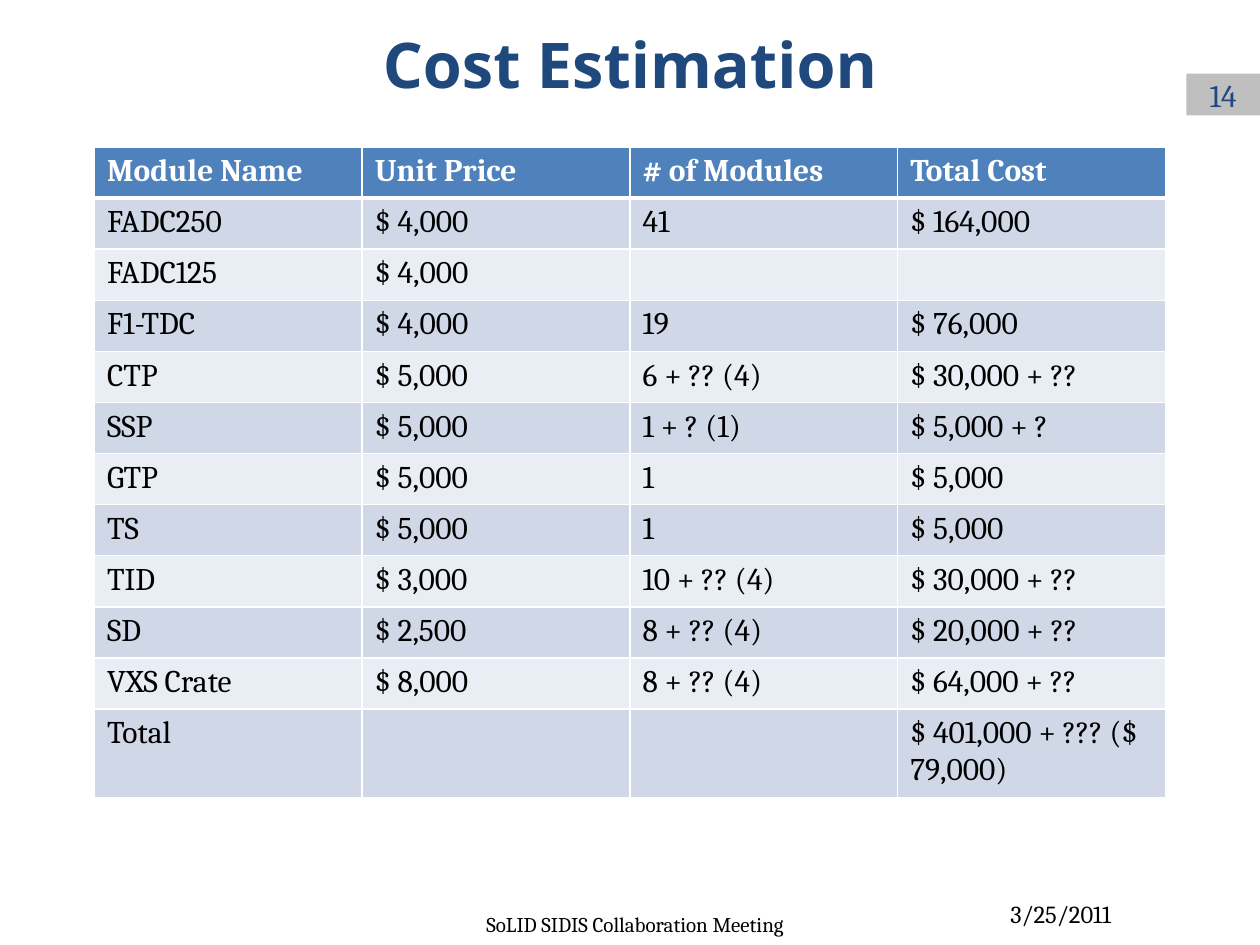
from lxml import etree
from pptx import Presentation
from pptx.dml.color import RGBColor
from pptx.enum import shapes, text
from pptx.oxml import ns
from pptx.util import Inches, Pt

COLORS = {
    "title": "1F497D", "badge": "BFBFBF", "header": "4F81BD",
    "odd": "D0D8E8", "even": "E9EDF4", "white": "FFFFFF", "black": "000000",
}
BODY, HEADING = "Cambria", "Open Sans"
UNIT = Inches(1) // 12  # the slide is a grid of 120 columns by 90 rows

HEADER = ("Module Name", "Unit Price", "# of Modules", "Total Cost")
MODULES = [
    ("FADC250", "$ 4,000", "41", "$ 164,000"),
    ("FADC125", "$ 4,000", "", ""),
    ("F1-TDC", "$ 4,000", "19", "$ 76,000"),
    ("CTP", "$ 5,000", "6 + ?? (4)", "$ 30,000 + ??"),
    ("SSP", "$ 5,000", "1 + ? (1)", "$ 5,000 + ?"),
    ("GTP", "$ 5,000", "1", "$ 5,000"),
    ("TS", "$ 5,000", "1", "$ 5,000"),
    ("TID", "$ 3,000", "10 + ?? (4)", "$ 30,000 + ??"),
    ("SD", "$ 2,500", "8 + ?? (4)", "$ 20,000 + ??"),
    ("VXS Crate", "$ 8,000", "8 + ?? (4)", "$ 64,000 + ??"),
    ("Total", "", "", "$ 401,000 + ??? ($ 79,000)"),
]


def rgb(name):
    return RGBColor.from_string(COLORS[name])


def grid(box):
    return [round(n * UNIT) for n in box]


def set_font(p, size, color, name=BODY, bold=False):
    p.font.size, p.font.name, p.font.bold = Pt(size), name, bold
    p.font.color.rgb = rgb(color)


def write(tf, words, size, color, align="CENTER", name=BODY, bold=False):
    tf.word_wrap = True
    tf.vertical_anchor = text.MSO_ANCHOR.MIDDLE
    p = tf.paragraphs[0]
    p.text = words
    p.alignment = text.PP_ALIGN[align]
    set_font(p, size, color, name, bold)


def add_label(slide, box, words, size, color, **style):
    write(slide.shapes.add_textbox(*grid(box)).text_frame,
          words, size, color, **style)


def add_page_badge(slide, box, number):
    sp = slide.shapes.add_shape(shapes.MSO_SHAPE.RECTANGLE, *grid(box))
    sp.shadow.inherit = False
    sp.fill.solid()
    sp.fill.fore_color.rgb = rgb("badge")
    sp.line.fill.background()
    write(sp.text_frame, number, 18, "title")


def add_borders(cell, top, bottom):
    tcPr = cell._tc.get_or_add_tcPr()
    for side, width in (("L", 1), ("R", 1), ("T", top), ("B", bottom)):
        ln = etree.SubElement(tcPr, ns.qn(f"a:ln{side}"), w=str(Pt(width)))
        fill = etree.SubElement(ln, ns.qn("a:solidFill"))
        etree.SubElement(fill, ns.qn("a:srgbClr"), val=COLORS["white"])


def add_cost_table(slide, box):
    rows = [HEADER] + MODULES
    table = slide.shapes.add_table(len(rows), len(HEADER), *grid(box)).table
    for i, row in enumerate(rows):
        fill = "header" if i == 0 else "odd" if i % 2 else "even"
        for j, words in enumerate(row):
            cell = table.cell(i, j)
            add_borders(cell, top=3 if i == 1 else 1, bottom=3 if i == 0 else 1)
            cell.fill.solid()
            cell.fill.fore_color.rgb = rgb(fill)
            p = cell.text_frame.paragraphs[0]
            if words:
                p.text = words
            set_font(p, 18, "black" if i else "white", bold=i == 0)


def main():
    prs = Presentation()
    prs.slide_width, prs.slide_height = 120 * UNIT, 90 * UNIT
    slide = prs.slides.add_slide(prs.slide_layouts[6])

    # Page number and title
    add_page_badge(slide, (113, 7, 7, 4), "14")
    add_label(slide, (9, 1, 102, 10), "Cost Estimation", 36, "title",
              name=HEADING, bold=True)

    # Cost table: twelve equal rows
    add_cost_table(slide, (9, 14, 102, 12 * 4.87))

    # Date and footer
    add_label(slide, (90, 85, 17, 4), "3/25/2011", 14, "black", align="RIGHT")
    add_label(slide, (31, 86, 59, 4), "SoLID SIDIS Collaboration Meeting",
              12, "black")

    prs.save("out.pptx")


if __name__ == "__main__":
    main()
